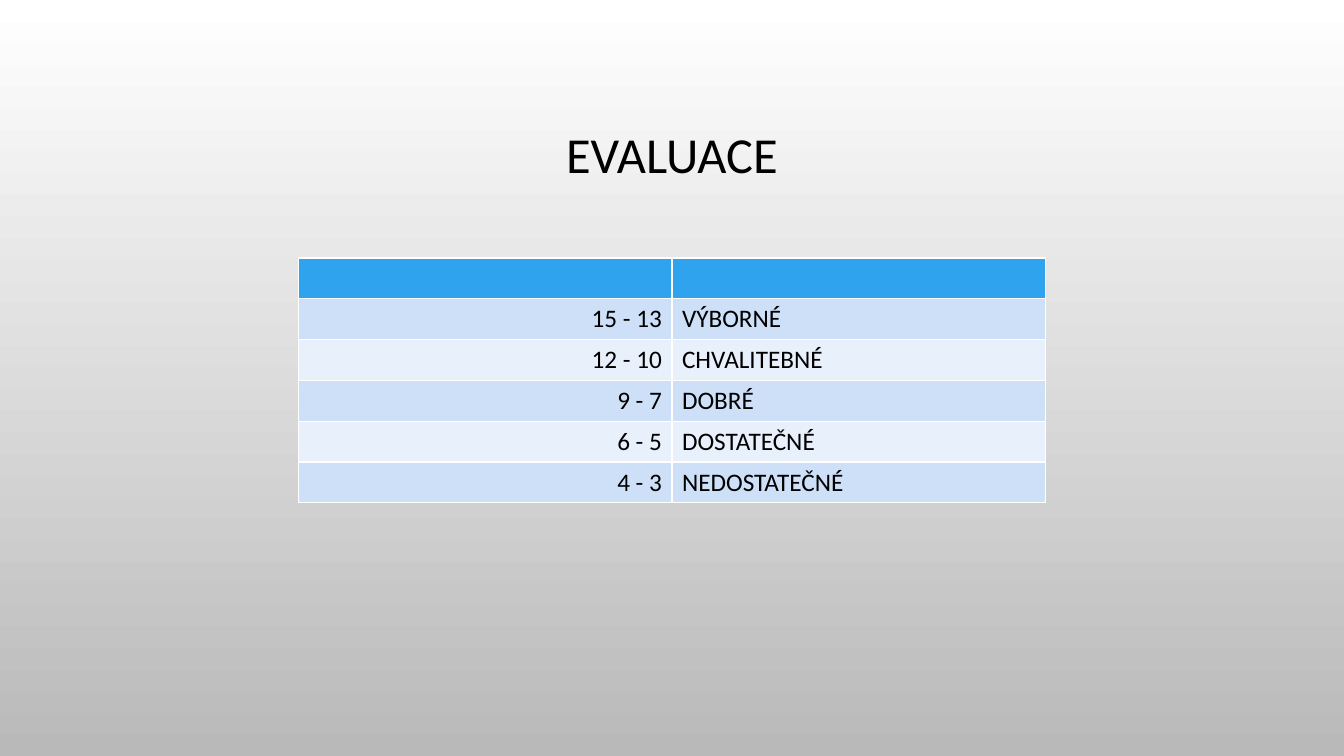
"""Build the evaluation slide with its grading table."""
from pptx import Presentation
from pptx.dml.color import RGBColor
from pptx.enum.text import MSO_ANCHOR, PP_ALIGN
from pptx.util import Inches, Pt

LEFT, CENTER, RIGHT = PP_ALIGN.LEFT, PP_ALIGN.CENTER, PP_ALIGN.RIGHT
MIDDLE = MSO_ANCHOR.MIDDLE
HEADER_FILL = "2FA3EE"
BAND_FILLS = ["CDE0F8", "E8F0FC"]
GRADES = [
    ("15 - 13", "VÝBORNÉ"),
    ("12 - 10", "CHVALITEBNÉ"),
    ("9 - 7", "DOBRÉ"),
    ("6 - 5", "DOSTATEČNÉ"),
    ("4 - 3", "NEDOSTATEČNÉ"),
]


def color(value):
    return RGBColor.from_string(value)


def write_text(text_frame, text, size=18, align=LEFT, line_spacing=1.0):
    paragraph = text_frame.paragraphs[0]
    paragraph.alignment = align
    paragraph.line_spacing = line_spacing
    run = paragraph.add_run()
    run.text = text
    run.font.name = "Calibri"
    run.font.size = Pt(size)
    run.font.bold = False
    run.font.color.rgb = color("000000")


presentation = Presentation()
presentation.slide_width = Inches(13.33)
presentation.slide_height = Inches(7.5)
slide = presentation.slides.add_slide(presentation.slide_layouts[6])

background = slide.background.fill
background.gradient()
background.gradient_angle = 270
for stop, value in zip(background.gradient_stops, ["FFFFFF", "B9B9B9"]):
    stop.color.rgb = color(value)

title = slide.shapes.add_textbox(Inches(1), Inches(0.68), Inches(11.33), Inches(1.75))
title.text_frame.word_wrap = True
title.text_frame.vertical_anchor = MIDDLE
write_text(title.text_frame, "EVALUACE", size=36, align=CENTER, line_spacing=0.9)

table = slide.shapes.add_table(
    len(GRADES) + 1, 2, Inches(2.96), Inches(2.56), Inches(7.41), Inches(2.43)
).table

for cell in table.rows[0].cells:
    cell.fill.solid()
    cell.fill.fore_color.rgb = color(HEADER_FILL)

for index, grade in enumerate(GRADES):
    for cell, text, align in zip(table.rows[index + 1].cells, grade, (RIGHT, LEFT)):
        cell.fill.solid()
        cell.fill.fore_color.rgb = color(BAND_FILLS[index % 2])
        write_text(cell.text_frame, text, align=align)

presentation.save("out.pptx")
